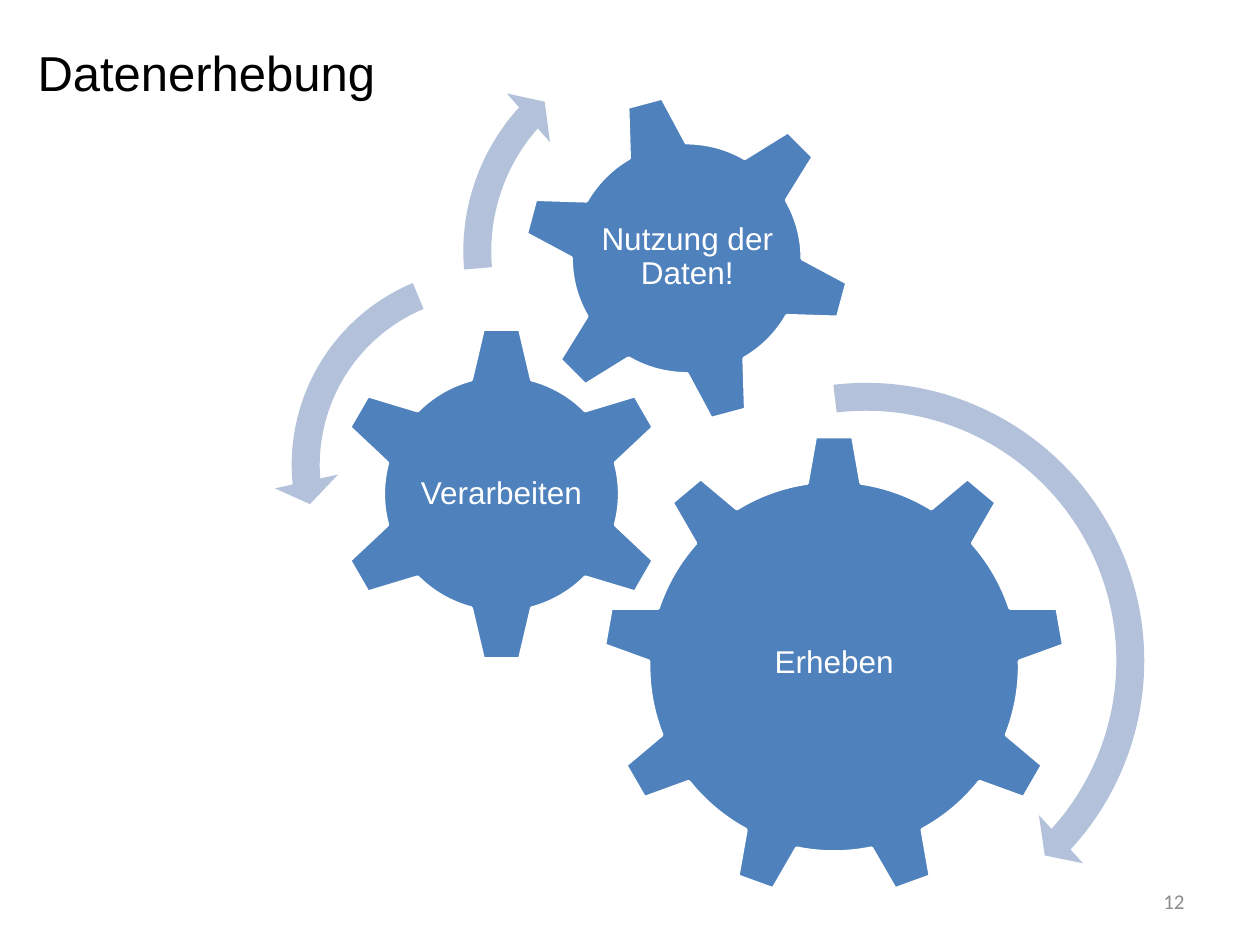
"""Build the gear diagram slide on data collection."""
import pptx
import pptx.dml.color
import pptx.enum.shapes
import pptx.enum.text
import pptx.util

Inches, Pt = pptx.util.Inches, pptx.util.Pt
RGBColor = pptx.dml.color.RGBColor
SHAPE = pptx.enum.shapes.MSO_SHAPE
ALIGN = pptx.enum.text.PP_ALIGN
ANCHOR = pptx.enum.text.MSO_ANCHOR

BLUE = RGBColor(0x4F, 0x81, 0xBD)
PALE_BLUE = RGBColor(0xB3, 0xC1, 0xDB)
WHITE = RGBColor(0xFF, 0xFF, 0xFF)
BLACK = RGBColor(0, 0, 0)
GRAY = RGBColor(0x8C, 0x8C, 0x8C)

GEARS = [
    ("Erheben", SHAPE.GEAR_9, (4.78, 3.45), 3.68, 0, (5.52, 4.32, 2.2, 1.89)),
    ("Verarbeiten", SHAPE.GEAR_6, (2.64, 2.58), 2.68, 0, (3.31, 3.26, 1.34, 1.32)),
    ("Nutzung der Daten!", SHAPE.GEAR_6, (4.14, 0.74), 2.62, 345, (4.72, 1.31, 1.47, 1.47)),
]
ARROWS = [
    (SHAPE.CIRCULAR_ARROW, (4.52, 2.89), 4.71, (0.047, 2.99, 25.487, 157.928, 0.055)),
    (SHAPE.LEFT_CIRCULAR_ARROW, (2.17, 1.98), 3.42, (0.065, 4.3, 104.891, 148.378, 0.075)),
    (SHAPE.CIRCULAR_ARROW, (3.53, 0.15), 3.69, (0.06, 3.941, 133.138, 105.082, 0.07)),
]


def add_square_shape(page, kind, corner, side, color):
    shape = page.shapes.add_shape(kind, *map(Inches, (*corner, side, side)))
    shape.shadow.inherit = False
    shape.fill.solid()
    shape.fill.fore_color.rgb = color
    shape.line.fill.background()
    return shape


def add_text(page, text, place, size, color, font="Arial",
             align=ALIGN.LEFT, anchor=ANCHOR.MIDDLE):
    box = page.shapes.add_textbox(*map(Inches, place))
    frame = box.text_frame
    frame.word_wrap = True
    frame.vertical_anchor = anchor
    para = frame.paragraphs[0]
    para.alignment = align
    span = para.add_run()
    span.text = text
    span.font.size = Pt(size)
    span.font.name = font
    span.font.color.rgb = color
    return frame


def add_gear(page, label, kind, corner, side, rotation, label_place):
    gear = add_square_shape(page, kind, corner, side, BLUE)
    gear.rotation = rotation
    gear.line.color.rgb = WHITE
    gear.line.width = Pt(2)
    frame = add_text(page, label, label_place, 18, WHITE, align=ALIGN.CENTER)
    frame.margin_left = frame.margin_right = Inches(0.02)
    frame.margin_top = frame.margin_bottom = Inches(0.03)
    frame.paragraphs[0].line_spacing = 0.9
    frame.paragraphs[0].space_after = Pt(0.35 * 18)


def main():
    deck = pptx.Presentation()
    deck.slide_width, deck.slide_height = Inches(10), Inches(7.5)
    page = deck.slides.add_slide(deck.slide_layouts[6])
    for gear in GEARS:
        add_gear(page, *gear)
    for kind, corner, side, adjustments in ARROWS:
        arrow = add_square_shape(page, kind, corner, side, PALE_BLUE)
        for index, value in enumerate(adjustments):
            arrow.adjustments[index] = value
    add_text(page, "Datenerhebung", (0.2, 0.29, 4.8, 0.57), 28, BLACK, anchor=ANCHOR.TOP)
    add_text(page, "12", (7.17, 6.95, 2.33, 0.4), 12, GRAY, "Calibri", ALIGN.RIGHT)
    deck.save("out.pptx")


if __name__ == "__main__":
    main()
